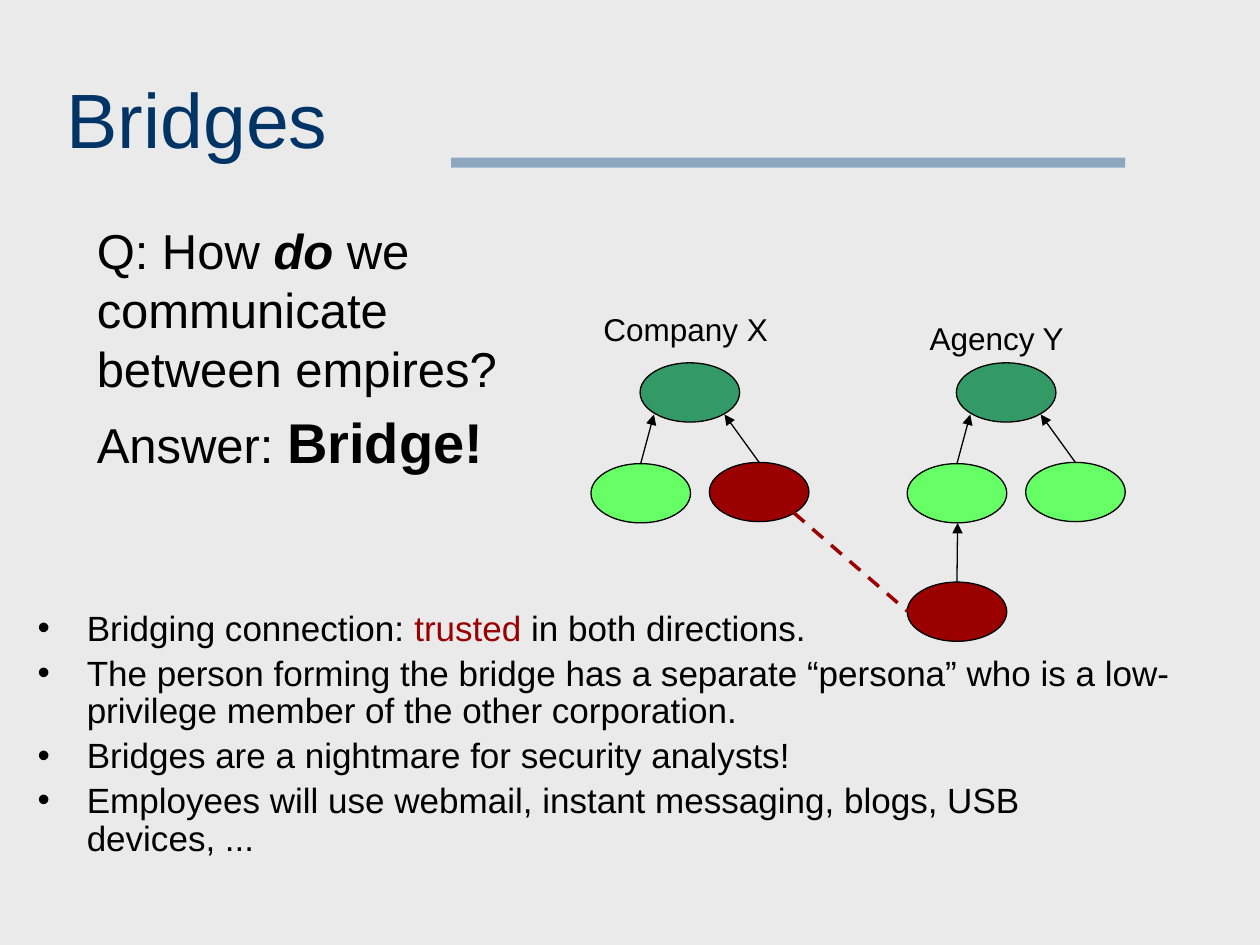
"""Build the Bridges slide: two hierarchies joined by a bridge."""
from lxml import etree
from pptx import Presentation, util as u
from pptx.dml.color import RGBColor
from pptx.enum import dml, shapes, text
from pptx.oxml import ns

BLACK, RED, LIME, GREEN = "000000", "9A0000", "66FF66", "339966"


def paint(fill, color):
    fill.solid()
    fill.fore_color.rgb = RGBColor.from_string(color)


def write(paragraph, words, size=20, color=BLACK, bold=False, italic=False):
    run = paragraph.add_run()
    run.text = words
    run.font.name, run.font.size = "Arial", u.Pt(size)
    run.font.bold, run.font.italic = bold, italic
    paint(run.font.fill, color)


presentation = Presentation()
presentation.slide_width, presentation.slide_height = u.Inches(10), u.Inches(7.5)
column = row = presentation.slide_width // 1000
slide = presentation.slides.add_slide(presentation.slide_layouts[6])
paint(slide.background.fill, "EAEAEA")

rule = slide.shapes.add_shape(
    shapes.MSO_SHAPE.RECTANGLE, 358 * column, 125 * row, 535 * column, 8 * row)
rule.shadow.inherit = False
rule.line.fill.background()
paint(rule.fill, "336699")
tint = rule.fill._xPr.find(".//" + ns.qn("a:srgbClr"))
etree.SubElement(tint, ns.qn("a:alpha"), val="50000")

blocks = [
    ((43, 52, 902, 98), 0, False, [
        [("Bridges", dict(size=44, color="003366"))]]),
    ((67, 170, 386, 260), 6, False, [
        [("Q: How ", dict(size=28)),
         ("do", dict(size=28, bold=True, italic=True)),
         (" we communicate between empires?", dict(size=28))],
        [("Answer: ", dict(size=28)), ("Bridge!", dict(size=32, bold=True))]]),
    ((469, 241, 165, 40), 0, False, [[("Company X", dict(size=18))]]),
    ((728, 248, 157, 40), 0, False, [[("Agency Y", dict(size=18))]]),
    ((20, 480, 929, 180), 4, True, [
        [("Bridging connection: ", {}), ("trusted", dict(color=RED)),
         (" in both directions.", {})],
        [("The person forming the bridge has a separate “persona” who is a "
          "low-privilege member of the other corporation.", {})],
        [("Bridges are a nightmare for security analysts!", {})],
        [("Employees will use webmail, instant messaging, blogs, "
          "USB devices, ...", {})]]),
]
for (left, y, width, height), gap, bulleted, paragraphs in blocks:
    frame = slide.shapes.add_textbox(
        left * column, y * row, width * column, height * row).text_frame
    frame.word_wrap, frame.vertical_anchor = True, text.MSO_ANCHOR.TOP
    for index, runs in enumerate(paragraphs):
        paragraph = frame.add_paragraph() if index else frame.paragraphs[0]
        if index:
            paragraph.space_before = u.Pt(gap)
        if bulleted:
            paragraph.line_spacing = 0.9
            properties = paragraph._p.get_or_add_pPr()
            properties.set("marL", str(39 * column))
            properties.set("indent", str(-39 * column))
            etree.SubElement(properties, ns.qn("a:buFont"), typeface="Arial")
            etree.SubElement(properties, ns.qn("a:buChar"), char="•")
        for words, style in runs:
            write(paragraph, words, **style)

members, links = [], []
for left, right_color in ((469, RED), (720, LIME)):
    first = len(members)
    members += [(left + 39, 288, GREEN), (left, 368, LIME),
                (left + 94, 367, right_color)]
    links += [(first + 1, left + 39, 368, left + 50, 329),
              (first + 2, left + 134, 367, left + 106, 329)]
members.append((720, 462, RED))
links.append((len(members) - 1, 760, 462, 760, 415))
links.append((None, 630, 407, 720, 485))

ellipses = []
for left, y, color in members:
    ellipse = slide.shapes.add_shape(
        shapes.MSO_SHAPE.OVAL, left * column, y * row, 79 * column, 47 * row)
    ellipse.shadow.inherit = False
    paint(ellipse.fill, color)
    paint(ellipse.line.fill, BLACK)
    ellipse.line.width = u.Pt(0.75)
    ellipses.append(ellipse)

for member, x1, y1, x2, y2 in links:
    link = slide.shapes.add_connector(
        shapes.MSO_CONNECTOR.STRAIGHT,
        x1 * column, y1 * row, x2 * column, y2 * row)
    bridge = member is None
    paint(link.line.fill, RED if bridge else BLACK)
    link.line.width = u.Pt(2 if bridge else 0.75)
    if bridge:
        link.line.dash_style = dml.MSO_LINE.DASH
    else:
        link.begin_connect(ellipses[member], 0)
        etree.SubElement(link.line._get_or_add_ln(), ns.qn("a:tailEnd"), type="triangle")
    etree.SubElement(link._element.spPr, ns.qn("a:effectLst"))

presentation.save("out.pptx")
